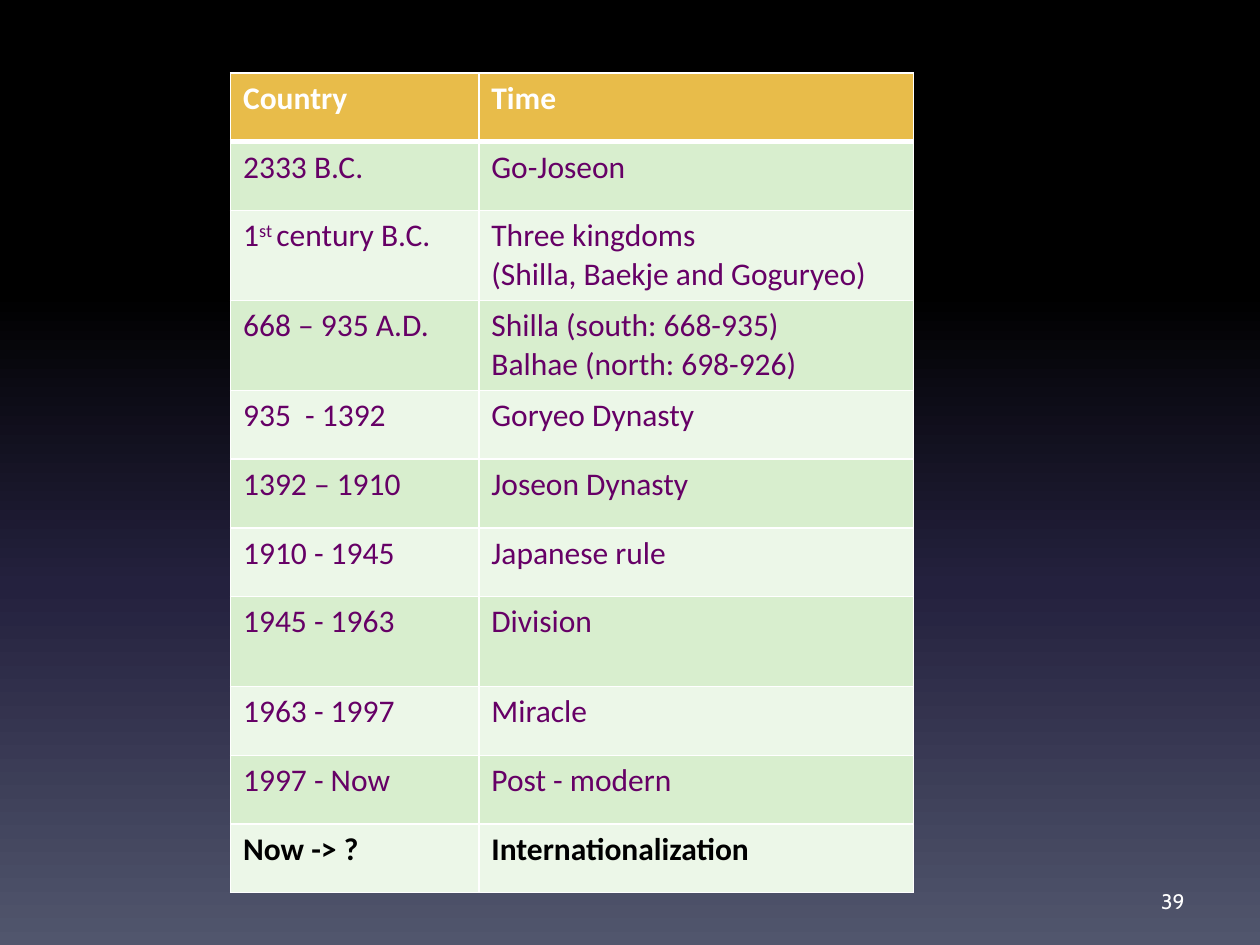
import pptx
import pptx.dml.color
import pptx.enum.text
import pptx.oxml
import pptx.oxml.ns
import pptx.util
from pptx.util import Inches

RGBColor = pptx.dml.color.RGBColor
WHITE = RGBColor(0xFF, 0xFF, 0xFF)
BLACK = RGBColor(0x00, 0x00, 0x00)
NAVY = RGBColor(0x24, 0x21, 0x3E)
SLATE = RGBColor(0x51, 0x56, 0x6D)
GOLD = RGBColor(0xE8, 0xBC, 0x4A)
GREEN = RGBColor(0xD8, 0xEE, 0xCE)
PALE_GREEN = RGBColor(0xEC, 0xF7, 0xE8)
PURPLE = RGBColor(0x66, 0x00, 0x66)

BACKGROUND_STOPS = [(0, BLACK), (31, BLACK), (62, NAVY), (100, SLATE)]
PERIODS = [
    ("Country", "Time"),
    ("2333 B.C.", "Go-Joseon"),
    ("1st century B.C.", "Three kingdoms\n(Shilla, Baekje and Goguryeo)"),
    ("668 – 935 A.D.", "Shilla (south: 668-935)\nBalhae (north: 698-926)"),
    ("935  - 1392", "Goryeo Dynasty"),
    ("1392 – 1910", "Joseon Dynasty"),
    ("1910 - 1945", "Japanese rule"),
    ("1945 - 1963", "Division"),
    ("1963 - 1997", "Miracle"),
    ("1997 - Now", "Post - modern"),
    ("Now -> ?", "Internationalization"),
]
COLUMN_SHARES = (0.3635, 0.6365)
ROW_HEIGHT = 0.545
TALL_ROW_HEIGHT = 0.715
TALL_ROWS = (2, 3, 7)


def set_background(s):
    fill = s.background.fill
    fill.gradient()
    fill.gradient_angle = 270
    stops = s.element.find(".//" + pptx.oxml.ns.qn("a:gsLst"))
    for stop in list(stops):
        stops.remove(stop)
    for position, color in BACKGROUND_STOPS:
        stops.append(pptx.oxml.parse_xml(
            f'<a:gs {pptx.oxml.ns.nsdecls("a")} pos="{position * 1000}">'
            f'<a:srgbClr val="{color}"/></a:gs>'))


def set_borders(cell, row):
    widths = {"lnL": 1, "lnR": 1,
              "lnT": 3 if row == 1 else 1,
              "lnB": 3 if row == 0 else 1}
    tcPr = cell._tc.get_or_add_tcPr()
    for i, (side, width) in enumerate(widths.items()):
        tcPr.insert(i, pptx.oxml.parse_xml(
            f'<a:{side} {pptx.oxml.ns.nsdecls("a")} w="{pptx.util.Pt(width)}">'
            f'<a:solidFill><a:srgbClr val="{WHITE}"/></a:solidFill></a:{side}>'))


def row_style(row):
    if row == 0:
        return GOLD, WHITE, True
    fill = GREEN if row % 2 else PALE_GREEN
    if row == len(PERIODS) - 1:
        return fill, BLACK, True
    return fill, PURPLE, False


def format_run(r, size, font, color, bold=False):
    r.font.size = pptx.util.Pt(size)
    r.font.name = font
    r.font.color.rgb = color
    r.font.bold = bold


def write_cell(cell, text, row):
    fill, color, bold = row_style(row)
    cell.fill.solid()
    cell.fill.fore_color.rgb = fill
    set_borders(cell, row)
    tf = cell.text_frame
    if text.startswith("1st "):
        p = tf.paragraphs[0]
        for part in ("1", "st ", text[4:]):
            p.add_run().text = part
        p.runs[1].font._element.set("baseline", "30000")
    else:
        tf.text = text
    for p in tf.paragraphs:
        for r in p.runs:
            format_run(r, 18, "Calibri", color, bold)


def add_timeline_table(s, left, top, width, height):
    table = s.shapes.add_table(len(PERIODS), 2, left, top, width, height).table
    for column, share in zip(table.columns, COLUMN_SHARES):
        column.width = int(width * share)
    for i, texts in enumerate(PERIODS):
        table.rows[i].height = Inches(TALL_ROW_HEIGHT if i in TALL_ROWS else ROW_HEIGHT)
        for j, text in enumerate(texts):
            write_cell(table.cell(i, j), text, i)


def add_page_number(s, left, top, width, height):
    tf = s.shapes.add_textbox(left, top, width, height).text_frame
    tf.word_wrap = True
    tf.vertical_anchor = pptx.enum.text.MSO_ANCHOR.MIDDLE
    tf.text = "39"
    p = tf.paragraphs[0]
    p.alignment = pptx.enum.text.PP_ALIGN.RIGHT
    format_run(p.runs[0], 12, "Cabin", WHITE)


def main():
    prs = pptx.Presentation()
    prs.slide_width, prs.slide_height = Inches(10), Inches(7.5)
    s = prs.slides.add_slide(prs.slide_layouts[6])
    set_background(s)
    add_page_number(s, Inches(7.17), Inches(6.95), Inches(2.33), Inches(0.4))
    add_timeline_table(s, Inches(1.83), Inches(0.58), Inches(5.42), Inches(6.51))
    prs.save("out.pptx")


if __name__ == "__main__":
    main()
